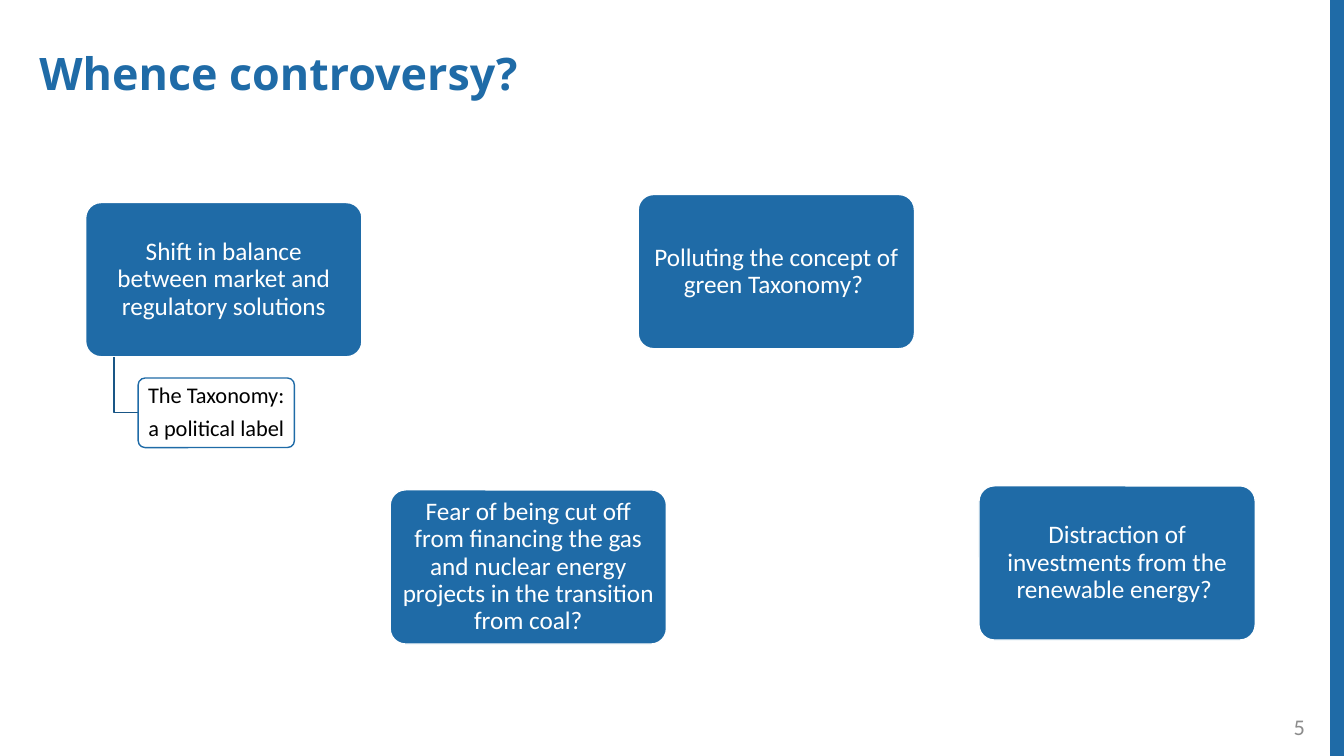
import pptx
import pptx.dml.color
import pptx.enum.shapes
import pptx.enum.text
import pptx.oxml.ns
import pptx.oxml.xmlchemy
import pptx.util
from lxml import etree

RGBColor = pptx.dml.color.RGBColor
BLUE = RGBColor(0x1F, 0x6B, 0xA7)
DARK_BLUE = RGBColor(0x19, 0x56, 0x86)
GREY = RGBColor(0x8C, 0x8C, 0x8C)
WHITE = RGBColor(0xFF, 0xFF, 0xFF)
BLACK = RGBColor(0x00, 0x00, 0x00)
EMU_PER_PX = 9144
PAGE_WIDTH, PAGE_HEIGHT = 1333, 750
CARD_WIDTH, CARD_HEIGHT = 274, 153
ALIGN = pptx.enum.text.PP_ALIGN
ANCHOR = pptx.enum.text.MSO_ANCHOR

CARDS = [
    (85, 201, "Shift in balance between market and regulatory solutions"),
    (387, 486, "Fear of being cut off from financing the gas and nuclear "
               "energy projects in the transition from coal?"),
    (633, 193, "Polluting the concept of green Taxonomy? "),
    (971, 482, "Distraction of investments from the renewable energy? "),
]
LABEL_LINES = ["The Taxonomy:", "a political label"]


def px(*lengths):
    """Turn px lengths into a list of EMU."""
    return [pptx.util.Emu(length * EMU_PER_PX) for length in lengths]


def style(para, size, color, align, font="Calibri"):
    """Set the font and alignment of a paragraph."""
    para.alignment = align
    para.font.name = font
    para.font.size = pptx.util.Pt(size)
    para.font.color.rgb = color


def add_rounded_box(page, box, lines, size, colors, inset):
    """Draw a rounded box with centred lines; colors are fill, line and text."""
    fill, line, text = colors
    shape = page.shapes.add_shape(
        pptx.enum.shapes.MSO_SHAPE.ROUNDED_RECTANGLE, *px(*box))
    shape.adjustments[0] = 0.1
    shape.shadow.inherit = False
    shape.fill.solid()
    shape.fill.fore_color.rgb = fill
    shape.line.color.rgb = line
    shape.line.width = pptx.util.Pt(1)
    frame = shape.text_frame
    frame.word_wrap = True
    frame.vertical_anchor = ANCHOR.MIDDLE
    frame.margin_left, frame.margin_right = px(inset, inset)
    frame.margin_top, frame.margin_bottom = px(inset, inset)
    frame.text = "\n".join(lines)
    for para in frame.paragraphs:
        style(para, size, text, ALIGN.CENTER)
        para.line_spacing = 0.9
        para.space_after = pptx.util.Pt(round(size * 0.35, 1))


def add_political_label(page, left, top):
    """Hang the label on an elbow line below the card at left, top."""
    start_x, start_y = left + 28, top + CARD_HEIGHT
    label_x, label_y, width, height = start_x + 24, start_y + 21, 155, 69
    middle = label_y + height // 2
    builder = page.shapes.build_freeform(start_x, start_y, scale=EMU_PER_PX)
    builder.add_line_segments(
        [(start_x, middle), (label_x, middle)], close=False)
    elbow = builder.convert_to_shape()
    elbow.shadow.inherit = False
    elbow.fill.background()
    elbow.line.color.rgb = DARK_BLUE
    elbow.line.width = pptx.util.Pt(1)
    add_rounded_box(page, (label_x, label_y, width, height), LABEL_LINES,
                    16, (WHITE, BLUE, BLACK), 4)


def add_side_bar(page, x):
    """Draw the thick vertical line at the right edge."""
    bar = page.shapes.add_connector(
        pptx.enum.shapes.MSO_CONNECTOR.STRAIGHT, *px(x, 0, x, PAGE_HEIGHT))
    bar.line.color.rgb = BLUE
    bar.line.width = pptx.util.Pt(12)
    etree.SubElement(bar.element.spPr, pptx.oxml.ns.qn("a:effectLst"))


def add_title(page, box, text):
    """Move and format the title placeholder."""
    title = page.shapes.title
    title.left, title.top, title.width, title.height = px(*box)
    frame = title.text_frame
    frame.text = text
    frame.word_wrap = True
    frame.auto_size = pptx.enum.text.MSO_AUTO_SIZE.NONE
    frame.vertical_anchor = ANCHOR.TOP
    para = frame.paragraphs[0]
    style(para, 32, BLUE, ALIGN.LEFT, "Open Sans")
    para.font.bold = True
    para.line_spacing = 0.9


def add_page_number(page, box, number):
    """Write the page number at the right of its box."""
    frame = page.shapes.add_textbox(*px(*box)).text_frame
    frame.word_wrap = True
    frame.vertical_anchor = ANCHOR.MIDDLE
    frame.text = number
    style(frame.paragraphs[0], 16, GREY, ALIGN.RIGHT)


def main():
    """Build the slide and save it."""
    deck = pptx.Presentation()
    deck.slide_width, deck.slide_height = px(PAGE_WIDTH, PAGE_HEIGHT)
    page = deck.slides.add_slide(deck.slide_layouts.get_by_name("Title Only"))
    add_side_bar(page, 1327)
    add_title(page, (29, 46, 1196, 58), "Whence controversy?")
    for left, top, text in CARDS:
        add_rounded_box(page, (left, top, CARD_WIDTH, CARD_HEIGHT), [text],
                        18, (BLUE, WHITE, WHITE), 8)
    add_political_label(page, *CARDS[0][:2])
    add_page_number(page, (1004, 701, 300, 40), "5")
    deck.save("out.pptx")


if __name__ == "__main__":
    main()
